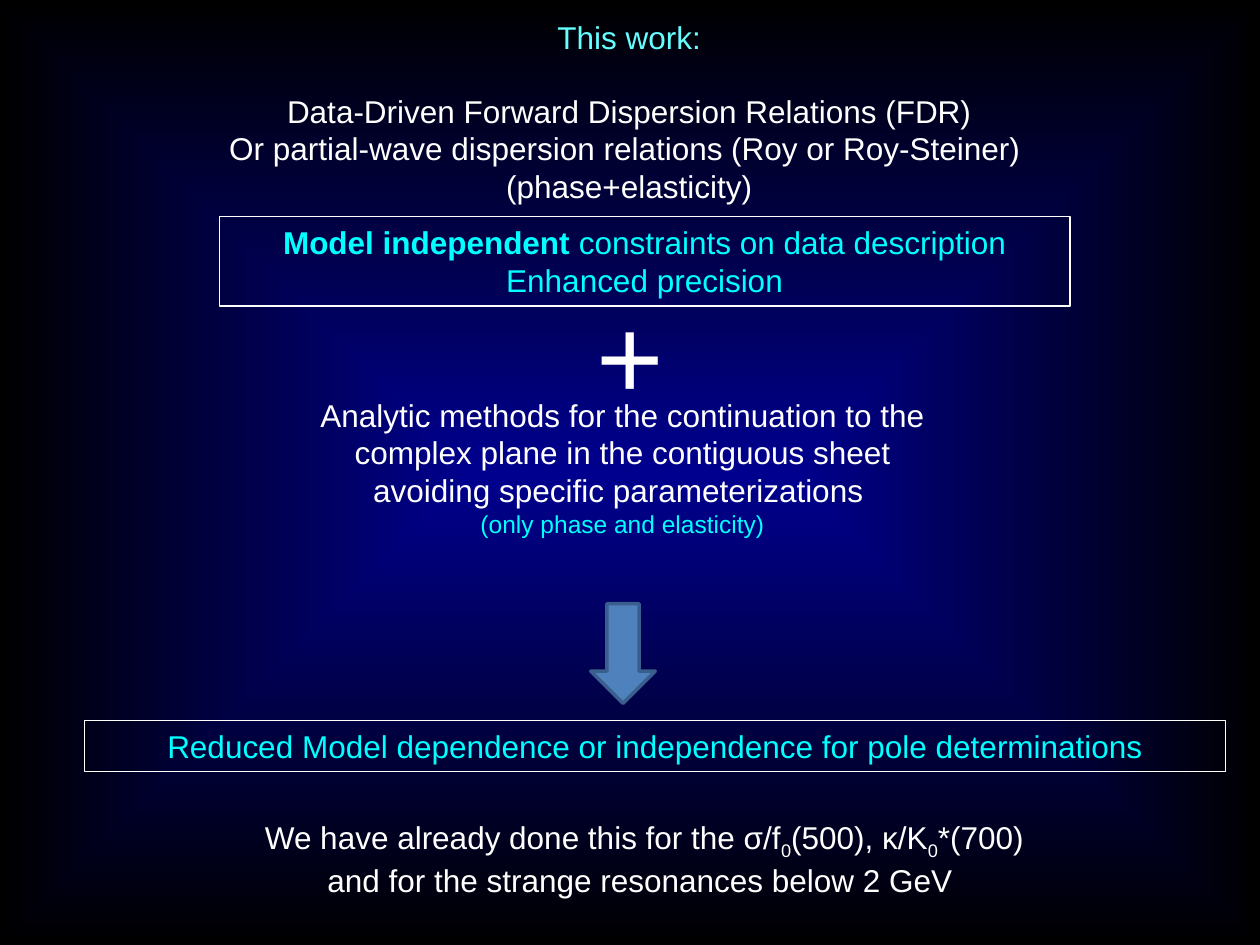
from dataclasses import dataclass
from lxml.etree import SubElement
from pptx import Presentation
from pptx.dml.color import RGBColor as RGB
from pptx.enum.shapes import MSO_SHAPE as Shape
from pptx.enum.text import MSO_ANCHOR as Anchor, PP_ALIGN as Align
from pptx.oxml.ns import qn
from pptx.util import Cm, Pt


@dataclass(frozen=True)
class Theme:
    font: str = "Arial"
    white: str = "FFFFFF"
    cyan: str = "00FFFF"
    pale: str = "66FFFF"
    navy: str = "00008E"
    black: str = "000000"
    steel: str = "4F81BD"
    edge: str = "3A5F8C"
    body: float = 18
    note: float = 14
    plus: float = 66
    gap: float = 20.7


look = Theme()


def frame(left, top, wide, high, wrap=True, line=False):
    spot = Cm(left), Cm(top), Cm(wide), Cm(high)
    if line:
        box = slide.shapes.add_shape(Shape.RECTANGLE, *spot)
        box.shadow.inherit = False
        box.fill.background()
        box.line.color.rgb = RGB.from_string(look.white)
        box.line.width = Pt(0.75)
    else:
        box = slide.shapes.add_textbox(*spot)
    box.text_frame.word_wrap = wrap
    box.text_frame.vertical_anchor = Anchor.TOP
    return box.text_frame


def write(text, area, color=look.white, size=look.body, bold=False, sub=False, new=True, gap=0):
    para = area.paragraphs[-1]
    if new and para.runs:
        para = area.add_paragraph()
    if new:
        para.alignment = Align.CENTER
        para.space_before = Pt(gap)
    run = para.add_run()
    run.text = text
    run.font.name = look.font
    run.font.size = Pt(size)
    run.font.bold = bold
    run.font.color.rgb = RGB.from_string(color)
    if sub:
        run.font._element.set("baseline", "-25000")


deck = Presentation()
deck.slide_width, deck.slide_height = Cm(25.4), Cm(19.05)
slide = deck.slides.add_slide(deck.slide_layouts[6])

back = slide.background.fill
back.gradient()
for stop, tone, place in zip(back.gradient_stops, (look.navy, look.black), (0, 1)):
    stop.color.rgb = RGB.from_string(tone)
    stop.position = place
grad = slide.element.find(".//" + qn("a:gradFill"))
grad.remove(grad.find(qn("a:lin")))
focus = SubElement(grad, qn("a:path"), {"path": "shape"})
SubElement(focus, qn("a:fillToRect"), {side: "50000" for side in "ltrb"})

goal = frame(1.7, 14.53, 23.01, 1.02, line=True)
write("Reduced Model dependence or independence for pole determinations", goal, color=look.cyan)

intro = frame(4.29, 0.23, 16.79, 4.11, wrap=False)
write("This work:", intro, color=look.pale)
write("Data-Driven Forward Dispersion Relations (FDR)", intro, gap=look.gap)
write("Or partial-wave dispersion relations (Roy or Roy-Steiner) ", intro)
write("(phase+elasticity)", intro)

arrow = slide.shapes.add_shape(Shape.DOWN_ARROW, Cm(11.91), Cm(12.17), Cm(1.3), Cm(2.01))
arrow.shadow.inherit = False
arrow.fill.solid()
arrow.fill.fore_color.rgb = RGB.from_string(look.steel)
arrow.line.color.rgb = RGB.from_string(look.edge)
arrow.line.width = Pt(2)

done = frame(3.96, 16.36, 18.06, 1.8)
write("We have already done this for the σ/f", done)
for text, sub in (("0", True), ("(500), κ/K", False), ("0", True), ("*(700)", False)):
    write(text, done, sub=sub, new=False)
write("and for the strange resonances below 2 GeV ", done)

model = frame(4.42, 4.37, 17.15, 1.8, line=True)
write("Model independent ", model, color=look.cyan, bold=True)
write("constraints on data description", model, color=look.cyan, new=False)
write("Enhanced precision", model, color=look.cyan)

plus = frame(11.76, 5.61, 1.88, 3.07, wrap=False)
write("+", plus, size=look.plus)

means = frame(6.2, 7.85, 12.7, 3.18)
write("Analytic methods for the continuation to the complex plane in the contiguous sheet", means)
write("avoiding specific parameterizations ", means)
write("(only phase and elasticity)", means, color=look.cyan, size=look.note)

deck.save("out.pptx")
